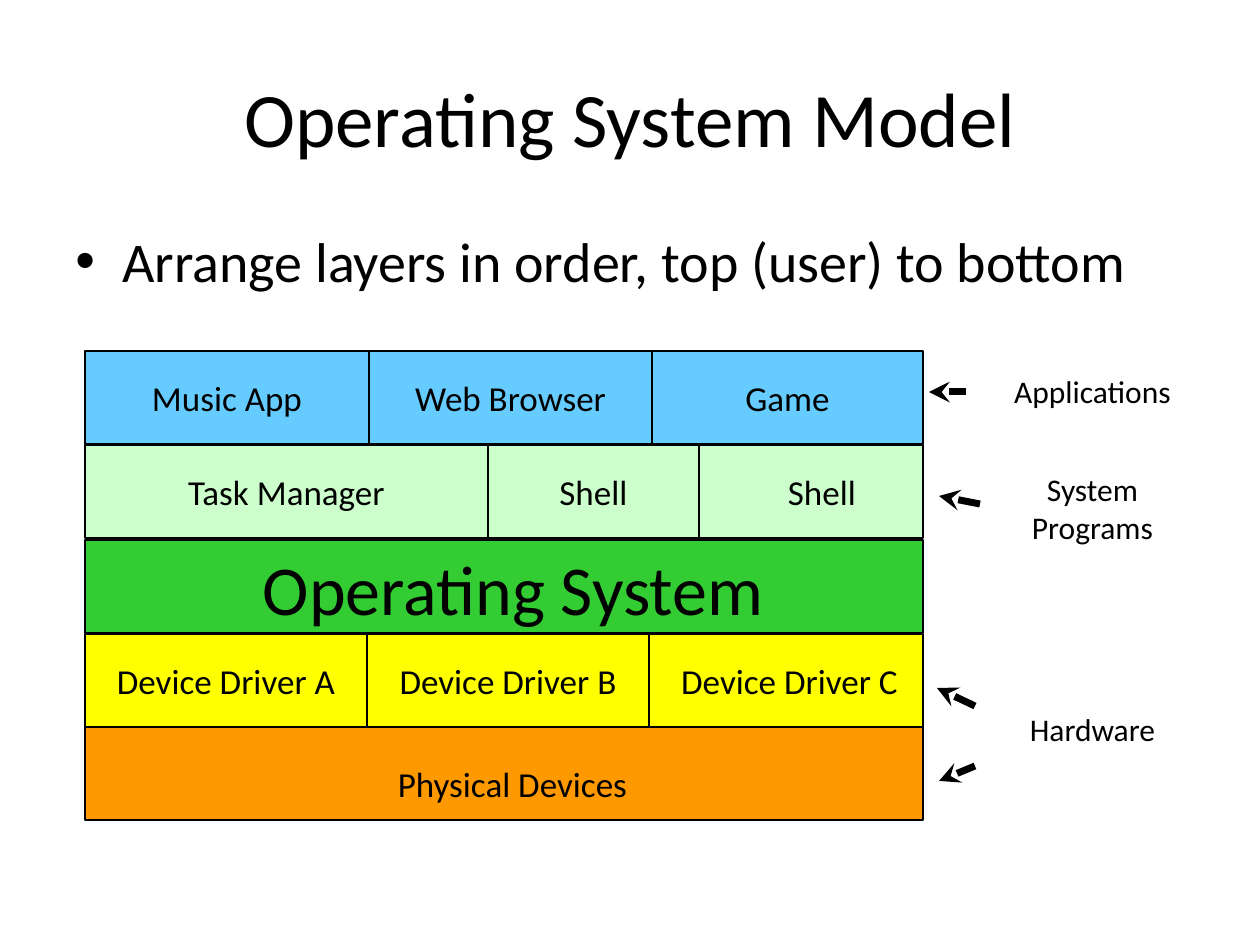
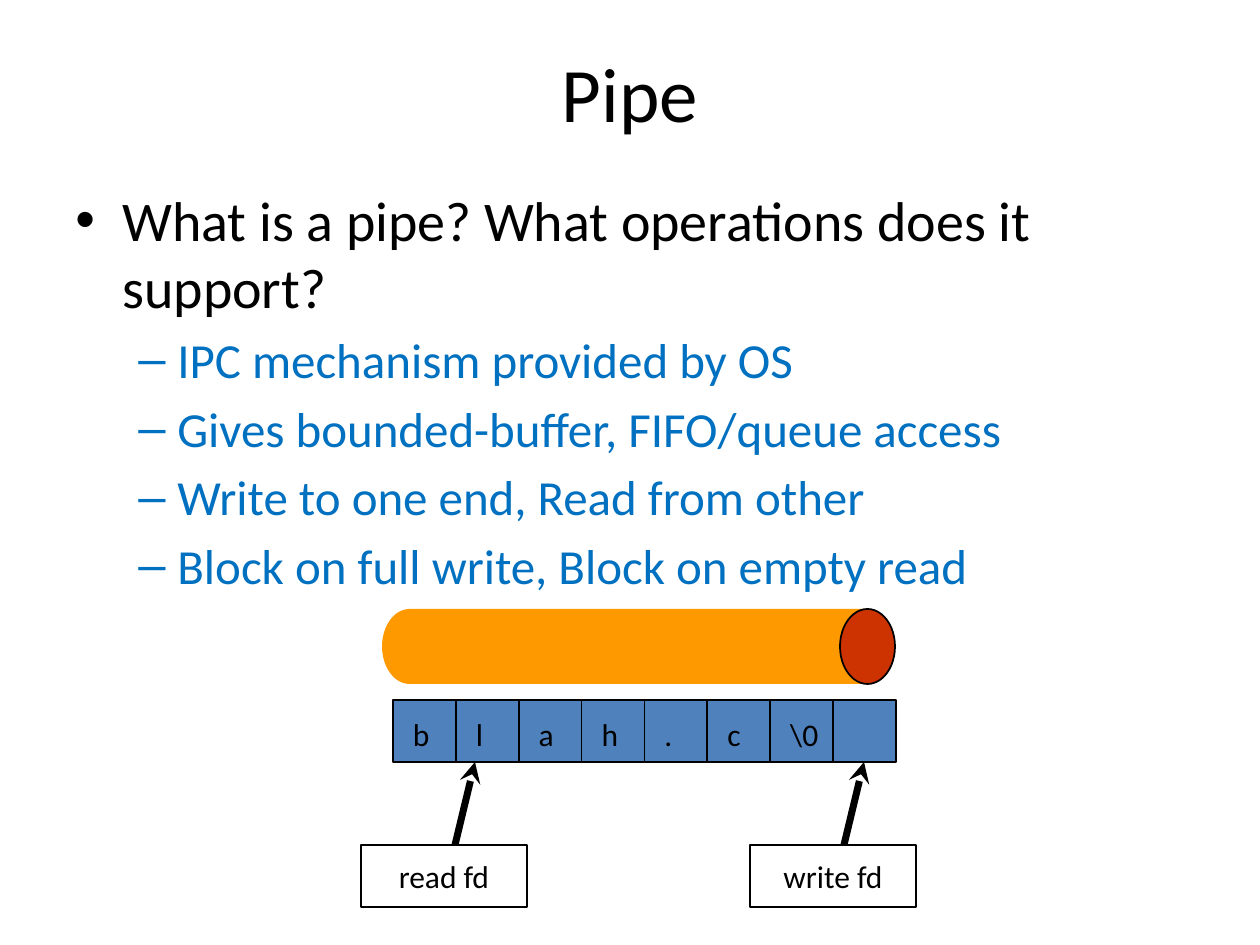
from lxml.etree import SubElement
from pptx import Presentation
from pptx.dml.color import RGBColor
from pptx.enum.shapes import MSO_CONNECTOR, MSO_SHAPE
from pptx.enum.text import MSO_ANCHOR, PP_ALIGN
from pptx.oxml.ns import qn
from pptx.util import Emu, Pt

PIXELS_PER_INCH = 126
FONT = "Calibri"
COLOURS = {
    "ink": "000000",
    "answer": "0070C0",
    "application": "66CCFF",
    "program": "CCFFCC",
    "system": "33CC33",
    "driver": "FFFF00",
    "device": "FF9900",
    "pipe": "FF9900",
    "pipe_end": "CC3300",
    "buffer": "4F81BD",
}
# Size, left margin, hanging indent, mark and colour of each bullet level
BULLETS = [
    (32, 47, 47, "•", "ink"),
    (28, 102, 39, "–", "answer"),
]


def px(length):
    return Emu(round(length * 914400 / PIXELS_PER_INCH))


def colour(name):
    return RGBColor.from_string(COLOURS[name])


def style_paragraph(para, size, colour_name="ink", align=PP_ALIGN.CENTER):
    para.alignment = align
    para.font.name = FONT
    para.font.size = Pt(size)
    para.font.color.rgb = colour(colour_name)


def write(shape, text, size, align=PP_ALIGN.CENTER, inset_left=0, inset_top=0):
    frame = shape.text_frame
    frame.word_wrap = True
    frame.vertical_anchor = MSO_ANCHOR.MIDDLE
    frame.margin_left, frame.margin_top = px(inset_left), px(inset_top)
    frame.margin_right = frame.margin_bottom = 0
    frame.text = text
    for para in frame.paragraphs:
        style_paragraph(para, size, align=align)


def add_block(page, box, fill=None, outlined=True, kind=MSO_SHAPE.RECTANGLE):
    block = page.shapes.add_shape(kind, *map(px, box))
    block.shadow.inherit = False
    if fill:
        block.fill.solid()
        block.fill.fore_color.rgb = colour(fill)
    else:
        block.fill.background()
    if outlined:
        block.line.color.rgb = colour("ink")
        block.line.width = Pt(1)
    else:
        block.line.fill.background()
    return block


def add_line(page, start, end, weight=1):
    line = page.shapes.add_connector(
        MSO_CONNECTOR.STRAIGHT, *map(px, (*start, *end)))
    line.line.color.rgb = colour("ink")
    line.line.width = Pt(weight)
    SubElement(line._element.spPr, qn("a:effectLst"))
    return line


def add_arrow(page, start, end):
    outline = add_line(page, start, end, 4)._element.spPr.find(qn("a:ln"))
    SubElement(outline, qn("a:tailEnd"), type="stealth")


def add_page(deck, title, title_top):
    page = deck.slides.add_slide(deck.slide_layouts[5])
    heading = page.shapes.title
    heading.left, heading.top, heading.width, heading.height = map(
        px, (63, title_top, 1134, 158))
    write(heading, title, 44)
    return page


def add_bullets(page, box, items):
    frame = page.shapes.add_textbox(*map(px, box)).text_frame
    frame.word_wrap = True
    for index, (level, text) in enumerate(items):
        para = frame.paragraphs[0] if index == 0 else frame.add_paragraph()
        size, margin, hanging, mark, colour_name = BULLETS[level]
        para.text = text
        para.level = level
        para.space_before = Pt(size * 0.2)
        properties = para._p.get_or_add_pPr()
        properties.set("marL", str(px(margin)))
        properties.set("indent", str(-px(hanging)))
        SubElement(properties, qn("a:buFont"), typeface="Arial")
        SubElement(properties, qn("a:buChar"), char=mark)
        style_paragraph(para, size, colour_name, PP_ALIGN.LEFT)


def add_layer_stack(page, box):
    left, top, width, height = box
    layer_height = 93
    # Each layer: top, fill, text size, then cells of label, right edge and insets
    layers = [
        (0, "application", 20, [("Music App", 284, 0, 0), ("Web Browser", 567, 0, 0),
                                ("Game", width, 0, 0)]),
        (94, "program", 20, [("Task Manager", 403, 0, 0), ("Shell", 614, 0, 0),
                             ("Shell", width, 22, 0)]),
        (189, "system", 40, [("Operating System", width, 18, 2)]),
        (283, "driver", 20, [("Device Driver A", 282, 0, 0),
                             ("Device Driver B", 564, 0, 0),
                             ("Device Driver C", width, 7, 0)]),
        (height - layer_height, "device", 20, [("Physical Devices", width, 17, 20)]),
    ]
    for layer_top, fill, size, cells in layers:
        start = 0
        for label, end, inset_left, inset_top in cells:
            cell = add_block(
                page, (left + start, top + layer_top, end - start, layer_height), fill)
            write(cell, label, size, inset_left=inset_left, inset_top=inset_top)
            start = end


def add_layer_notes(page, box):
    left, top, width, height = box
    label_left, label_height = 64, 90
    # Each note: label, middle of the label, then its arrows
    notes = [
        ("Applications", 40, [((37, 41), (0, 41))]),
        ("System\nPrograms", 157, [((51, 153), (10, 145))]),
        ("Hardware", 378, [((46, 355), (8, 337)), ((46, 415), (10, 430))]),
    ]
    for label, middle, arrows in notes:
        note = page.shapes.add_textbox(
            px(left + label_left), px(top + middle - label_height / 2),
            px(width - label_left), px(label_height))
        write(note, label, 18)
        for start, end in arrows:
            add_arrow(page, *((left + x, top + y) for x, y in (start, end)))


def add_pipe(page, box):
    left, top, width, height = box
    cap = 55
    add_block(page, (left + cap / 2, top, width - cap, height), "pipe", False)
    add_block(page, (left + width - cap, top, cap, height), "pipe_end",
              kind=MSO_SHAPE.OVAL)
    add_block(page, (left, top, cap, height), "pipe", False, MSO_SHAPE.OVAL)


def add_buffer(page, box, contents, cell_count):
    left, top, width, height = box
    cell_width = width / cell_count
    add_block(page, box, "buffer")
    for index in range(1, cell_count):
        divider = left + index * cell_width
        add_line(page, (divider, top), (divider, top + height))
    for index, character in enumerate(contents):
        label = page.shapes.add_textbox(
            *map(px, (left + index * cell_width, top, cell_width, height)))
        write(label, character, 18, PP_ALIGN.LEFT, inset_left=20, inset_top=5)


def add_descriptor(page, box, label):
    left, top, width, height = box
    add_arrow(page, (left + 94, top), (left + 114, top - 83))
    write(add_block(page, box), label, 18)


def build_model_page(deck):
    page = add_page(deck, "Operating System Model", 38)
    add_bullets(page, (63, 220, 1134, 120),
                [(0, "Arrange layers in order, top (user) to bottom")])
    add_layer_stack(page, (85, 351, 838, 469))
    add_layer_notes(page, (929, 351, 263, 469))


def build_pipe_page(deck):
    page = add_page(deck, "Pipe", 13)
    add_bullets(page, (63, 179, 1134, 410), [
        (0, "What is a pipe? What operations does it support?"),
        (1, "IPC mechanism provided by OS"),
        (1, "Gives bounded-buffer, FIFO/queue access"),
        (1, "Write to one end, Read from other"),
        (1, "Block on full write, Block on empty read"),
    ])
    add_pipe(page, (382, 609, 513, 75))
    add_buffer(page, (393, 700, 503, 62), ["b", "l", "a", "h", ".", "c", "\\0"], 8)
    for left, label in ((361, "read fd"), (750, "write fd")):
        add_descriptor(page, (left, 845, 166, 62), label)


def main():
    deck = Presentation()
    deck.slide_width, deck.slide_height = px(1260), px(945)
    build_model_page(deck)
    build_pipe_page(deck)
    deck.save("out.pptx")


if __name__ == "__main__":
    main()
